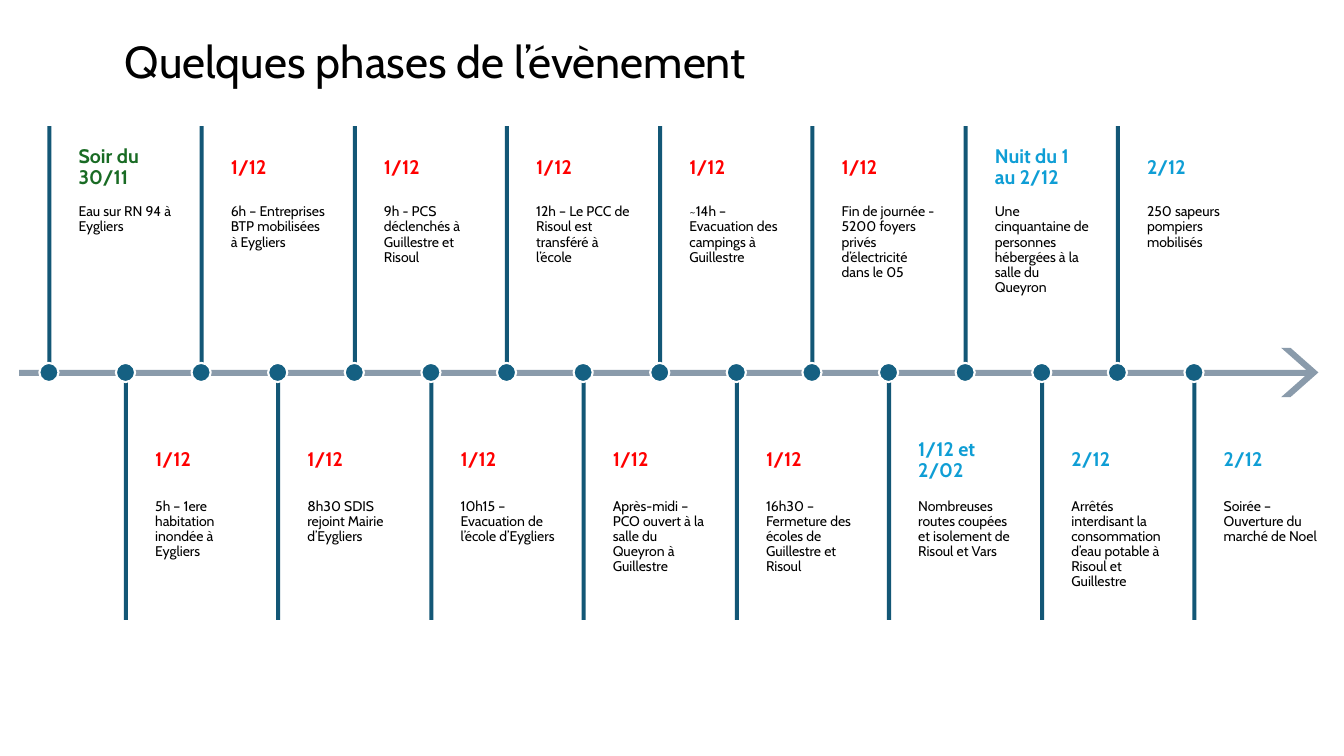
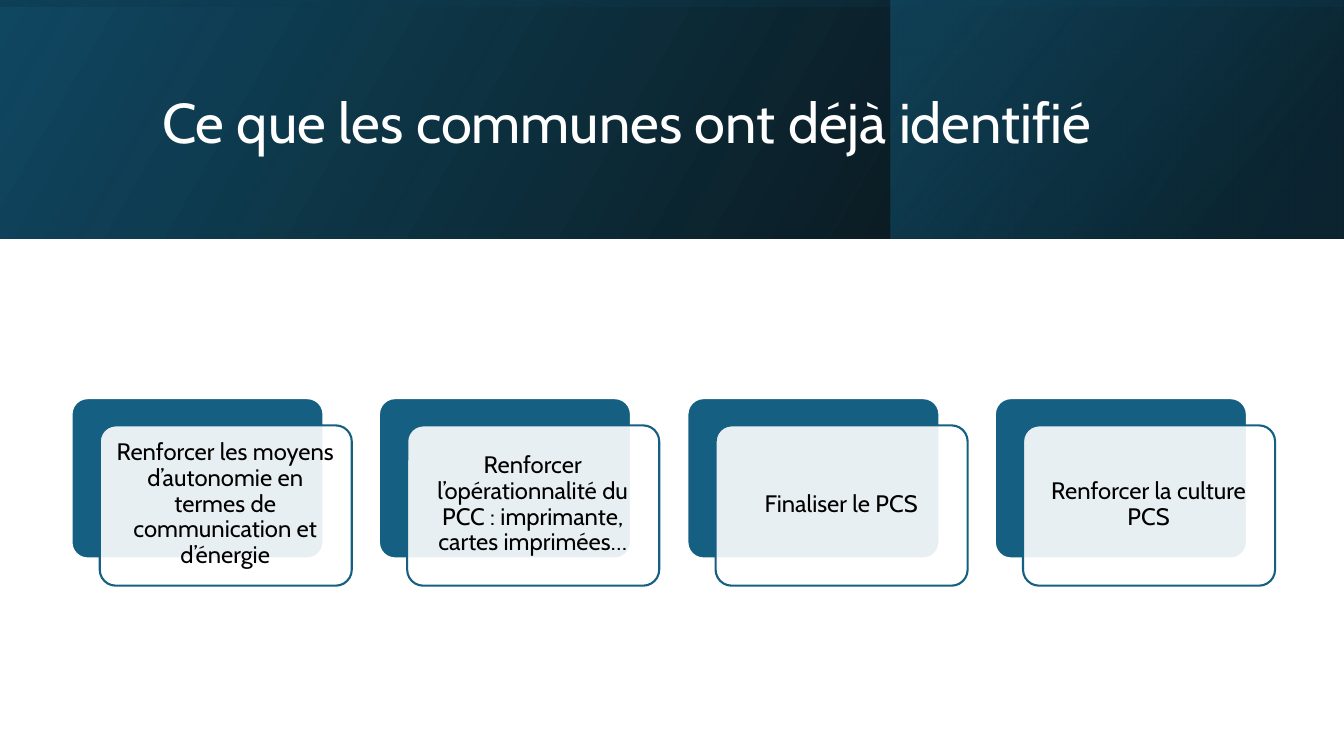
from dataclasses import dataclass

from lxml import etree
from pptx import Presentation
from pptx import util as u
from pptx.dml.color import RGBColor
from pptx.enum import shapes, text
from pptx.oxml import ns

EMU_PER_PX = 9144  # 100 px to the inch
FONT = "Cabin"

BLACK = RGBColor(0x00, 0x00, 0x00)
WHITE = RGBColor(0xFF, 0xFF, 0xFF)
TEAL = RGBColor(0x15, 0x60, 0x82)
STEM = RGBColor(0x13, 0x57, 0x76)
AXIS = RGBColor(0x8A, 0x9B, 0xAB)
NAVY = RGBColor(0x10, 0x48, 0x62)
DEEP = RGBColor(0x0B, 0x30, 0x41)
GREEN = RGBColor(0x19, 0x6B, 0x24)
RED = RGBColor(0xFF, 0x00, 0x00)
SKY = RGBColor(0x0F, 0x9E, 0xD5)

RECT = shapes.MSO_SHAPE.RECTANGLE
ROUND = shapes.MSO_SHAPE.ROUNDED_RECTANGLE
TOP, MIDDLE = text.MSO_ANCHOR.TOP, text.MSO_ANCHOR.MIDDLE
LEFT, CENTER = text.PP_ALIGN.LEFT, text.PP_ALIGN.CENTER


@dataclass(frozen=True)
class Area:
    left: int
    top: int
    width: int
    height: int

    def emu(self) -> list[u.Emu]:
        sides = (self.left, self.top, self.width, self.height)
        return [u.Emu(side * EMU_PER_PX) for side in sides]


@dataclass(frozen=True)
class Event:
    date: str
    color: RGBColor
    detail: str


@dataclass(frozen=True)
class Stop:
    position: int
    color: RGBColor
    opacity: int


@dataclass(frozen=True)
class Band:
    area: Area
    angle: int
    stops: tuple[Stop, ...]
    rotation: int = 0


@dataclass(frozen=True)
class Row:
    stem_top: int
    date_top: int
    date_height: int
    detail_top: int
    detail_height: int


EVENTS = (
    Event("Soir du 30/11", GREEN, "Eau sur RN 94 à Eygliers"),
    Event("1/12", RED, "5h – 1ere habitation inondée à Eygliers"),
    Event("1/12", RED, "6h – Entreprises BTP mobilisées à Eygliers"),
    Event("1/12", RED, "8h30 SDIS rejoint Mairie d’Eygliers"),
    Event("1/12", RED, "9h - PCS déclenchés à Guillestre et Risoul"),
    Event("1/12", RED, "10h15 – Evacuation de l’école d’Eygliers"),
    Event("1/12", RED, "12h – Le PCC de Risoul est transféré à l’école"),
    Event("1/12", RED, "Après-midi – PCO ouvert à la salle du Queyron à Guillestre"),
    Event("1/12", RED, "~14h – Evacuation des campings à Guillestre"),
    Event("1/12", RED, "16h30 – Fermeture des écoles de Guillestre et Risoul"),
    Event("1/12", RED, "Fin de journée - 5200 foyers privés d’électricité dans le 05"),
    Event("1/12 et 2/02", SKY, "Nombreuses routes coupées et isolement de Risoul et Vars"),
    Event("Nuit du 1 au 2/12", SKY,
          "Une cinquantaine de personnes hébergées à la salle du Queyron"),
    Event("2/12", SKY,
          "Arrêtés interdisant la consommation d’eau potable à Risoul et Guillestre"),
    Event("2/12", SKY, "250 sapeurs pompiers mobilisés"),
    Event("2/12", SKY, "Soirée – Ouverture du marché de Noel"),
)
ROWS = (Row(125, 130, 73, 203, 142), Row(370, 419, 76, 495, 115))

BANDS = (
    Band(Area(0, 0, 1333, 237), 330, (Stop(0, BLACK, 96), Stop(100, NAVY, 100))),
    Band(Area(884, 0, 449, 237), 320, (Stop(19, DEEP, 68), Stop(100, TEAL, 48))),
    Band(Area(548, -548, 237, 1333), 350, (Stop(23, NAVY, 16), Stop(99, BLACK, 45)), 270),
)
ACTIONS = (
    "Renforcer les moyens d’autonomie en termes de communication et d’énergie",
    "Renforcer l’opérationnalité du PCC : imprimante, cartes imprimées…",
    "Finaliser le PCS",
    "Renforcer la culture PCS",
)


def add_alpha(color_node, opacity: int) -> None:
    etree.SubElement(color_node, ns.qn("a:alpha"), val=str(opacity * 1000))


def add_figure(page, kind, area: Area, fill: RGBColor, line: RGBColor | None = None,
               adjust: float | None = None):
    figure = page.shapes.add_shape(kind, *area.emu())
    figure.shadow.inherit = False
    figure.fill.solid()
    figure.fill.fore_color.rgb = fill
    if line is None:
        figure.line.fill.background()
    else:
        figure.line.color.rgb = line
        figure.line.width = u.Pt(1.5)
    if adjust is not None:
        figure.adjustments[0] = adjust
    return figure


def add_text(page, area: Area, words: str, size: int, color: RGBColor = BLACK,
             bold: bool = False, anchor=MIDDLE, align=LEFT,
             inset_x: int = 0, inset_y: int = 0) -> None:
    box = page.shapes.add_textbox(*area.emu())
    frame = box.text_frame
    frame.word_wrap = True
    frame.vertical_anchor = anchor
    frame.margin_left = frame.margin_right = u.Emu(inset_x * EMU_PER_PX)
    frame.margin_top = frame.margin_bottom = u.Emu(inset_y * EMU_PER_PX)
    para = frame.paragraphs[0]
    para.alignment = align
    para.line_spacing = 0.9
    span = para.add_run()
    span.text = words
    span.font.name = FONT
    span.font.size = u.Pt(size)
    span.font.bold = bold
    span.font.color.rgb = color


def add_title(page, area: Area, words: str, size: int, color: RGBColor) -> None:
    add_text(page, area, words, size, color, inset_x=10, inset_y=5)


def add_band(page, band: Band) -> None:
    figure = add_figure(page, RECT, band.area, NAVY)
    figure.rotation = band.rotation
    properties = figure._element.spPr
    properties.find(ns.qn("a:xfrm")).set("flipH", "1")
    solid = properties.find(ns.qn("a:solidFill"))
    gradient = etree.Element(ns.qn("a:gradFill"), rotWithShape="1")
    stop_list = etree.SubElement(gradient, ns.qn("a:gsLst"))
    for stop in band.stops:
        node = etree.SubElement(stop_list, ns.qn("a:gs"), pos=str(stop.position * 1000))
        color = etree.SubElement(node, ns.qn("a:srgbClr"), val=str(stop.color))
        add_alpha(color, stop.opacity)
    etree.SubElement(gradient, ns.qn("a:lin"), ang=str(band.angle * 60000), scaled="0")
    properties.replace(solid, gradient)


def build_timeline(page) -> None:
    # Axis and its arrow tip
    add_figure(page, RECT, Area(19, 367, 1284, 6), AXIS)
    add_figure(page, shapes.MSO_SHAPE.CHEVRON, Area(1271, 345, 37, 49), AXIS, adjust=0.75)

    # Events alternate above and below the axis
    for index, event in enumerate(EVENTS):
        row = ROWS[index % 2]
        stem_left = 47 + round(1136 * index / (len(EVENTS) - 1))
        text_left = stem_left + 31
        add_figure(page, RECT, Area(stem_left, row.stem_top, 4, 245), STEM)
        add_figure(page, shapes.MSO_SHAPE.OVAL, Area(stem_left - 8, 360, 19, 19), TEAL, WHITE)
        add_text(page, Area(text_left, row.date_top, 94, row.date_height),
                 event.date, 14, event.color, bold=True)
        add_text(page, Area(text_left, row.detail_top, 94, row.detail_height),
                 event.detail, 10, anchor=TOP)

    add_title(page, Area(114, 16, 1098, 96), "Quelques phases de l’évènement", 32, BLACK)


def build_actions(page) -> None:
    # Header
    for band in BANDS:
        add_band(page, band)
    add_title(page, Area(151, 38, 1063, 172), "Ce que les communes ont déjà identifié", 40, WHITE)

    # Cards: a solid back and a translucent front
    for index, action in enumerate(ACTIONS):
        left = 71 + round(916 * index / (len(ACTIONS) - 1))
        add_figure(page, ROUND, Area(left, 395, 250, 159), TEAL, WHITE, 0.1)
        front = add_figure(page, ROUND, Area(left + 28, 422, 250, 159), WHITE, TEAL, 0.1)
        fill = front._element.spPr.find(ns.qn("a:solidFill"))
        add_alpha(fill[0], 90)
        add_text(page, Area(left + 32, 426, 241, 149), action, 17,
                 align=CENTER, inset_x=7, inset_y=7)


def main() -> None:
    deck = Presentation()
    deck.slide_width = u.Emu(12192000)
    deck.slide_height = u.Emu(750 * EMU_PER_PX)
    for build in (build_timeline, build_actions):
        build(deck.slides.add_slide(deck.slide_layouts[6]))
    deck.save("out.pptx")


if __name__ == "__main__":
    main()
